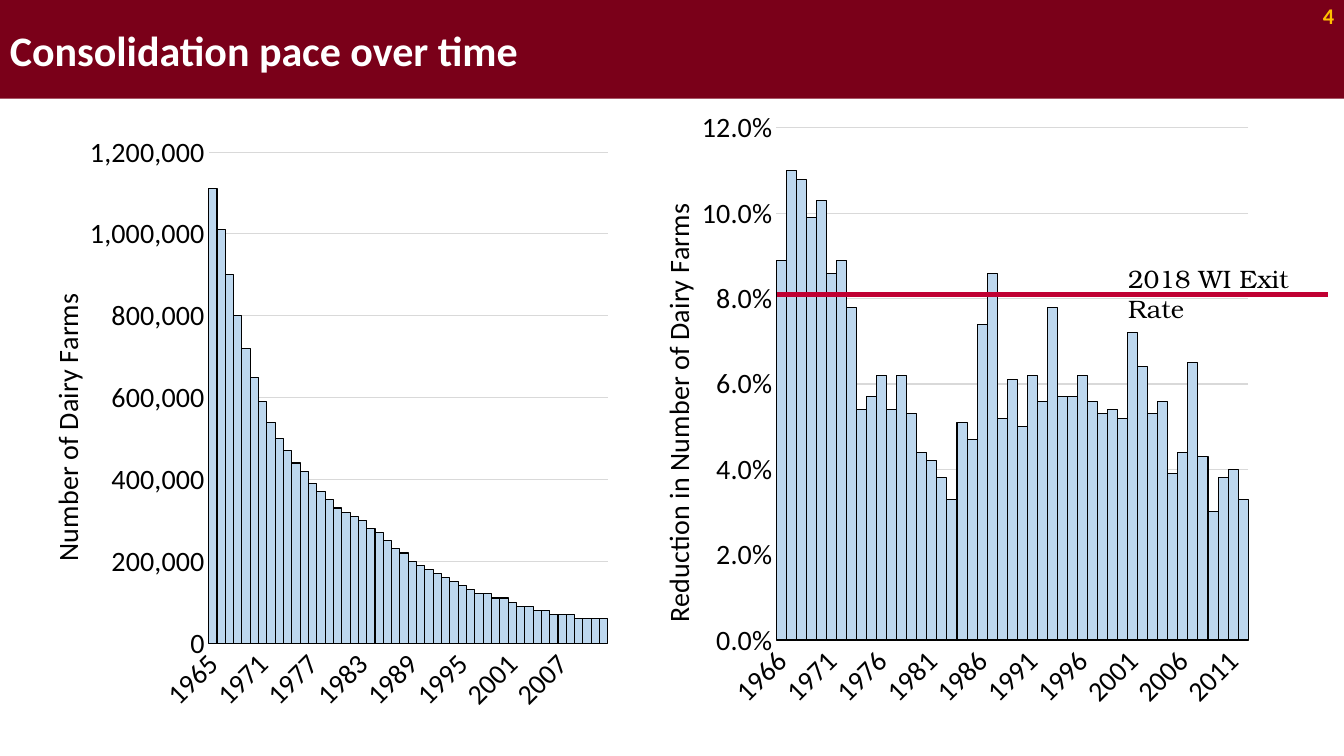
from collections import namedtuple
from lxml import etree
from pptx import Presentation
from pptx.chart.data import CategoryChartData
from pptx.dml.color import RGBColor
from pptx.enum.chart import XL_CHART_TYPE as ChartType, XL_TICK_MARK as TickMark
from pptx.enum.shapes import MSO_CONNECTOR as Connector, MSO_SHAPE as Shape
from pptx.enum.text import MSO_ANCHOR as Anchor, PP_ALIGN as Align
from pptx.oxml import parse_xml
from pptx.oxml.ns import nsdecls, qn
from pptx.util import Inches, Pt

MAROON = RGBColor(0x7A, 0x00, 0x19)
GOLD = RGBColor(0xFF, 0xC0, 0x00)
CRIMSON = RGBColor(0xC0, 0x00, 0x32)
PALE_BLUE = RGBColor(0xBD, 0xD7, 0xEE)
GRID_GRAY = RGBColor(0xD9, 0xD9, 0xD9)
BLACK = RGBColor(0x00, 0x00, 0x00)
WHITE = RGBColor(0xFF, 0xFF, 0xFF)
SANS = "Calibri"
SERIF = "TeX Gyre Bonum"

FARMS_THOUSANDS = [
    1110, 1010, 900, 800, 720, 650, 590, 540, 500, 470, 440, 420,
    390, 370, 350, 330, 320, 310, 300, 280, 270, 250, 230, 220,
    200, 190, 180, 170, 160, 150, 140, 130, 120, 120, 110, 110,
    100, 90, 90, 80, 80, 70, 70, 70, 60, 60, 60, 60]
EXIT_RATES = [
    0.089, 0.11, 0.108, 0.099, 0.103, 0.086, 0.089, 0.078, 0.054, 0.057,
    0.062, 0.054, 0.062, 0.053, 0.044, 0.042, 0.038, 0.033, 0.051, 0.047,
    0.074, 0.086, 0.052, 0.061, 0.05, 0.062, 0.056, 0.078, 0.057, 0.057,
    0.062, 0.056, 0.053, 0.054, 0.052, 0.072, 0.064, 0.053, 0.056, 0.039,
    0.044, 0.065, 0.043, 0.03, 0.038, 0.04, 0.033]

Box = namedtuple("Box", "left top width height")
Scale = namedtuple("Scale", "top step number_format label_skip")


def inches(box):
    return [Inches(length) for length in box]


def style_font(font, size, color, name=SANS, bold=False):
    font.name, font.size, font.bold = name, Pt(size), bold
    font.color.rgb = color


def add_span(frame, text, size, color, name=SANS, bold=False, align=Align.LEFT):
    para = frame.paragraphs[0]
    para.alignment = align
    span = para.add_run()
    span.text = text
    style_font(span.font, size, color, name, bold)


def add_banner(page, box, text, size, color, align=Align.LEFT):
    banner = page.shapes.add_shape(Shape.RECTANGLE, *inches(box))
    banner.shadow.inherit = False
    banner.fill.solid()
    banner.fill.fore_color.rgb = MAROON
    banner.line.fill.background()
    banner.text_frame.vertical_anchor = Anchor.MIDDLE
    add_span(banner.text_frame, text, size, color, bold=True, align=align)


def place_part(part, index, target, **fractions):
    for old in part.findall(qn("c:layout")):
        part.remove(old)
    entries = [("xMode", "edge"), ("yMode", "edge"), *fractions.items()]
    if target:
        entries.insert(0, ("layoutTarget", target))
    items = "".join(f'<c:{tag} val="{value}"/>' for tag, value in entries)
    part.insert(index, parse_xml(
        f'<c:layout {nsdecls("c")}><c:manualLayout>{items}</c:manualLayout></c:layout>'))


def style_category_axis(axis, label_skip):
    axis.major_tick_mark = axis.minor_tick_mark = TickMark.NONE
    axis.format.line.color.rgb = GRID_GRAY
    axis.format.line.width = Pt(0.75)
    style_font(axis.tick_labels.font, 20, BLACK)
    element = axis._element
    element.find(qn("c:txPr")).find(qn("a:bodyPr")).set("rot", "-2700000")
    skip = parse_xml(f'<c:tickLblSkip {nsdecls("c")} val="{label_skip}"/>')
    element.find(qn("c:noMultiLvlLbl")).addprevious(skip)


def style_value_axis(axis, scale, title):
    axis.minimum_scale, axis.maximum_scale = 0, scale.top
    axis.major_unit = scale.step
    axis.major_tick_mark = axis.minor_tick_mark = TickMark.NONE
    axis.format.line.fill.background()
    axis.major_gridlines.format.line.color.rgb = GRID_GRAY
    axis.major_gridlines.format.line.width = Pt(0.75)
    axis.tick_labels.number_format = scale.number_format
    axis.tick_labels.number_format_is_linked = False
    style_font(axis.tick_labels.font, 20, BLACK)
    frame = axis.axis_title.text_frame
    add_span(frame, title, 20, BLACK, align=Align.CENTER)
    body = frame._txBody.find(qn("a:bodyPr"))
    body.set("rot", "-5400000")
    body.set("vert", "horz")


def add_history(page, box, plot, title_at, kind, overlap, first_year, values, scale, title):
    data = CategoryChartData(number_format=scale.number_format)
    data.categories = [str(first_year + i) for i in range(len(values))]
    data.add_series("Series 1", values)
    chart = page.shapes.add_chart(kind, *inches(box), data).chart
    chart.has_legend = chart.has_title = False
    style_font(chart.font, 20, BLACK)

    bars = chart.plots[0]
    bars.vary_by_categories = False
    bars.gap_width, bars.overlap = 0, overlap
    series = bars.series[0]
    series.format.fill.solid()
    series.format.fill.fore_color.rgb = PALE_BLUE
    series.format.line.color.rgb = BLACK
    series.format.line.width = Pt(0.75)

    style_category_axis(chart.category_axis, scale.label_skip)
    style_value_axis(chart.value_axis, scale, title)
    place_part(chart._chartSpace.chart.plotArea, 0, "inner",
               x=plot.left / box.width, y=plot.top / box.height,
               w=plot.width / box.width, h=plot.height / box.height)
    place_part(chart.value_axis.axis_title._element, 1, None,
               x=title_at[0] / box.width, y=title_at[1] / box.height)


def add_exit_rate(page, box):
    level = Inches(box.top + 0.36)
    rule = page.shapes.add_connector(
        Connector.STRAIGHT, Inches(box.left), level, Inches(box.left + box.width), level)
    rule.line.color.rgb = CRIMSON
    rule.line.width = Pt(3.5)
    etree.SubElement(rule._element.spPr, qn("a:effectLst"))

    label_box = Box(box.left + 3.38, box.top, 2.24, box.height)
    label = page.shapes.add_textbox(*inches(label_box))
    label.text_frame.word_wrap = True
    add_span(label.text_frame, "2018 WI Exit Rate", 18, BLACK, SERIF)


def main():
    deck = Presentation()
    deck.slide_width, deck.slide_height = Inches(13.33), Inches(7.5)
    page = deck.slides.add_slide(deck.slide_layouts[6])

    add_banner(page, Box(0, 0, 13.33, 0.98), "Consolidation pace over time", 30, WHITE)
    add_banner(page, Box(12.71, 0, 0.62, 0.31), "4", 16, GOLD, Align.RIGHT)
    add_history(page, Box(0.15, 1.22, 5.99, 5.97), Box(1.92, 0.29, 3.96, 4.87),
                (0.27, 1.64), ChartType.COLUMN_CLUSTERED, -27, 1965,
                [count * 1000 for count in FARMS_THOUSANDS],
                Scale(1200000, 200000, "#,##0", 6), "Number of Dairy Farms")
    add_history(page, Box(6.22, 0.98, 6.29, 6.17), Box(1.48, 0.29, 4.68, 5.08),
                (0.26, 0.99), ChartType.COLUMN_STACKED, 100, 1966, EXIT_RATES,
                Scale(0.12, 0.02, "0.0%", 5), "Reduction in Number of Dairy Farms")
    add_exit_rate(page, Box(7.71, 2.56, 5.46, 0.4))
    deck.save("out.pptx")


if __name__ == "__main__":
    main()
